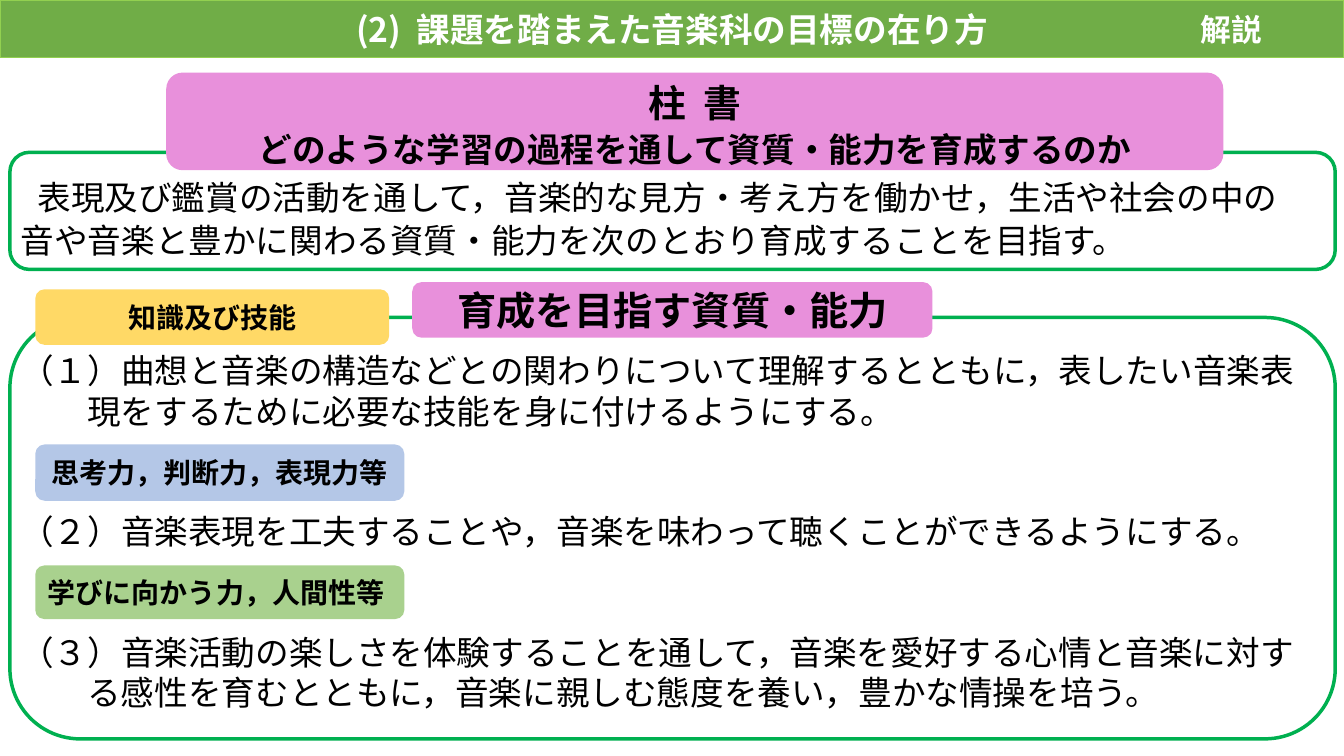
import pptx
import pptx.dml.color
import pptx.enum.shapes
import pptx.enum.text
import pptx.oxml.ns
import pptx.util
from lxml import etree

Cm = pptx.util.Cm
Pt = pptx.util.Pt
ALIGN = pptx.enum.text.PP_ALIGN
ANCHOR = pptx.enum.text.MSO_ANCHOR
ROUNDED = pptx.enum.shapes.MSO_SHAPE.ROUNDED_RECTANGLE
FONT = "Noto Sans CJK JP"
GREEN, PINK = "00B050", "E890DB"


def color(hex_text):
    return pptx.dml.color.RGBColor.from_string(hex_text)


def write(shape, lines, sizes, hex_text="000000", bold=True,
          align=ALIGN.CENTER, anchor=ANCHOR.MIDDLE):
    """Fill a shape with one paragraph per line and format the runs."""
    frame = shape.text_frame
    frame.text = "\n".join(lines)
    frame.word_wrap = True
    frame.auto_size = pptx.enum.text.MSO_AUTO_SIZE.NONE
    frame.vertical_anchor = anchor
    for paragraph, size in zip(frame.paragraphs, sizes):
        paragraph.alignment = align
        for run in paragraph.runs:
            run.font.size = Pt(size)
            run.font.bold = bold
            run.font.name = FONT
            run.font.color.rgb = color(hex_text)
            east_asian = etree.Element(pptx.oxml.ns.qn("a:ea"), typeface=FONT)
            run.font._element.find(pptx.oxml.ns.qn("a:latin")).addnext(east_asian)
    return frame


presentation = pptx.Presentation()
presentation.slide_width = Cm(33.87)
presentation.slide_height = Cm(19.05)
slide = presentation.slides.add_slide(presentation.slide_layouts[1])

# Title band
title = slide.shapes.title
title.left, title.top, title.width, title.height = Cm(0), Cm(0), Cm(33.87), Cm(1.45)
title.fill.solid()
title.fill.fore_color.rgb = color("70AD47")
title.line.color.rgb = color("92D050")
title.line.width = Pt(1)
write(title, ["(2)  課題を踏まえた音楽科の目標の在り方"], [24], "FFFFFF")

reference = slide.shapes.add_textbox(Cm(30), Cm(0), Cm(3.87), Cm(1.45))
write(reference, ["解説"], [22], "FFFFFF", align=ALIGN.LEFT)

# Outlined frames
frames = []
for top, height in [(8, 10.62), (3.84, 2.95)]:
    outline = slide.shapes.add_shape(ROUNDED, Cm(0.25), Cm(top), Cm(33.4), Cm(height))
    outline.shadow.inherit = False
    outline.fill.background()
    outline.line.color.rgb = color(GREEN)
    outline.line.width = Pt(2.5)
    frames.append(outline)

# Overall statement inside the upper frame
statement = write(
    frames[1],
    ["表現及び鑑賞の活動を通して，音楽的な見方・考え方を働かせ，生活や社会の中の"
     "音や音楽と豊かに関わる資質・能力を次のとおり育成することを目指す。"],
    [24], bold=False, align=ALIGN.LEFT, anchor=ANCHOR.TOP)
statement.margin_left, statement.margin_right = Cm(0.13), Cm(0.75)
statement.margin_top = Cm(0.39)
statement.paragraphs[0].line_spacing = Pt(31)
statement.paragraphs[0]._p.get_or_add_pPr().set("indent", str(Pt(12)))

# Three numbered goals with hanging indents
goals = [
    "（１）曲想と音楽の構造などとの関わりについて理解するとともに，表したい音楽表"
    "現をするために必要な技能を身に付けるようにする。",
    "（２）音楽表現を工夫することや，音楽を味わって聴くことができるようにする。",
    "（３）音楽活動の楽しさを体験することを通して，音楽を愛好する心情と音楽に対す"
    "る感性を育むとともに，音楽に親しむ態度を養い，豊かな情操を培う。",
]
body = slide.placeholders[1]
body.left, body.top, body.width, body.height = Cm(0.51), Cm(8.82), Cm(32.5), Cm(9.4)
goal_frame = write(body, goals, [24] * 3, bold=False, align=ALIGN.LEFT, anchor=ANCHOR.TOP)
goal_frame.margin_left = goal_frame.margin_right = goal_frame.margin_top = Cm(0)
for index, paragraph in enumerate(goal_frame.paragraphs):
    paragraph.line_spacing = Pt(29)
    paragraph.space_before = Pt(57 if index else 0)
    properties = paragraph._p.get_or_add_pPr()
    properties.set("marL", str(Pt(48)))
    properties.set("indent", str(-Pt(48)))
    etree.SubElement(properties, pptx.oxml.ns.qn("a:buNone"))

# Coloured headings: left, top, width, height, fill, lines, sizes, alignment
headings = [
    (0.89, 11.2, 9.3, 1.42, "B4C7E7", ["思考力，判断力，表現力等"], [20], ALIGN.CENTER),
    (0.89, 7.29, 8.92, 1.4, "FFD966", ["知識及び技能"], [20], ALIGN.CENTER),
    (0.89, 14.25, 9.3, 1.35, "A9D18E", ["学びに向かう力，人間性等"], [20], ALIGN.LEFT),
    (4.19, 1.83, 26.64, 2.46, PINK,
     ["柱  書", "どのような学習の過程を通して資質・能力を育成するのか"], [27, 24], ALIGN.CENTER),
    (10.39, 7.11, 13.11, 1.4, PINK, ["育成を目指す資質・能力"], [28], ALIGN.CENTER),
]
for left, top, width, height, fill, lines, sizes, align in headings:
    heading = slide.shapes.add_shape(ROUNDED, Cm(left), Cm(top), Cm(width), Cm(height))
    heading.shadow.inherit = False
    heading.fill.solid()
    heading.fill.fore_color.rgb = color(fill)
    heading.line.fill.background()
    heading_frame = write(heading, lines, sizes, align=align)
    if len(lines) > 1:
        heading_frame.margin_top = Cm(0.33)
        for paragraph in heading_frame.paragraphs:
            paragraph.line_spacing = Pt(31)

presentation.save("out.pptx")
